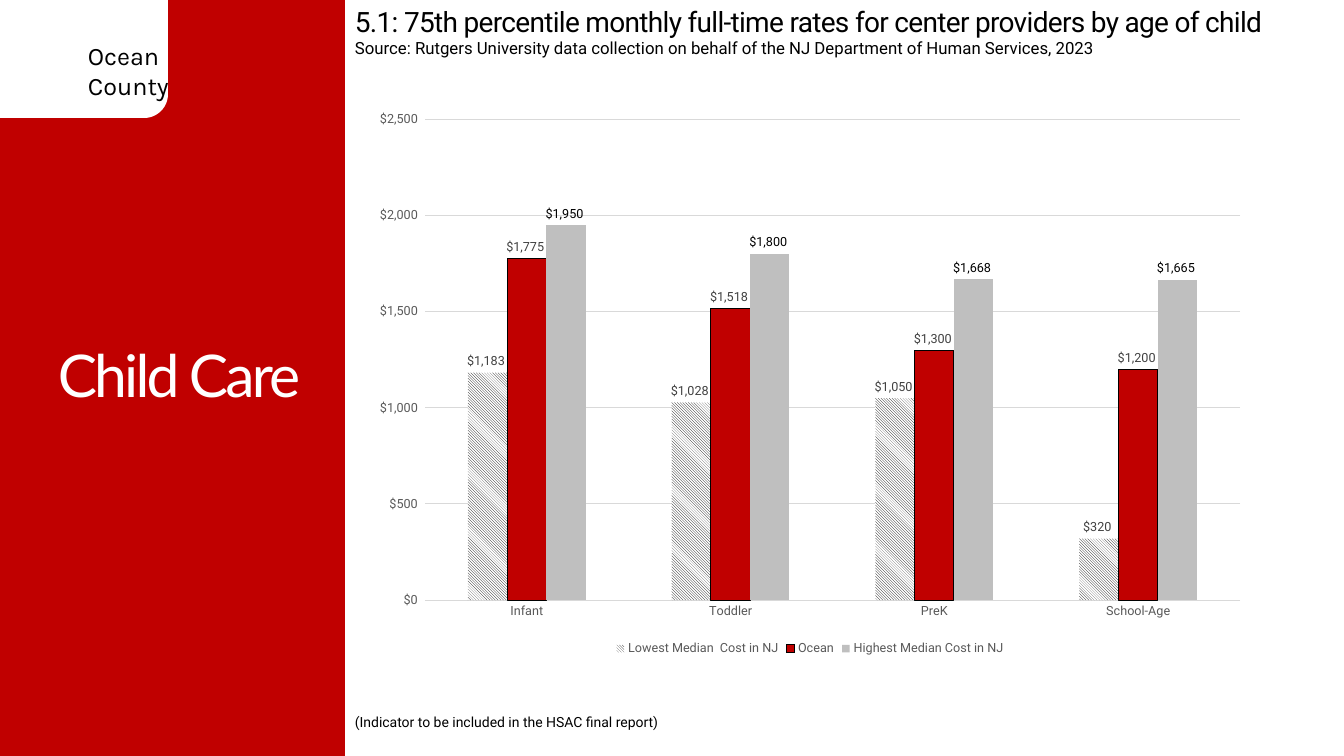
from dataclasses import dataclass

from pptx import Presentation
from pptx.chart.data import CategoryChartData
from pptx.dml.color import RGBColor
from pptx.enum.chart import XL_CHART_TYPE, XL_LABEL_POSITION, XL_LEGEND_POSITION, XL_TICK_MARK
from pptx.enum.dml import MSO_PATTERN
from pptx.enum.shapes import MSO_SHAPE
from pptx.enum.text import MSO_ANCHOR, MSO_AUTO_SIZE, PP_ALIGN
from pptx.util import Pt


@dataclass(frozen=True)
class Theme:
    red: str = "C00000"
    white: str = "FFFFFF"
    black: str = "000000"
    silver: str = "BFBFBF"
    grid: str = "D9D9D9"
    axis_text: str = "595959"
    label_text: str = "404040"
    section_size: int = 42
    heading_size: int = 20
    county_size: int = 18
    source_size: int = 12
    note_size: int = 10
    chart_size: int = 9
    body_font: str = "Roboto"
    section_font: str = "Lato"
    county_font: str = "Karla"


THEME = Theme()
SLIDE_SIZE = (1344, 756)
SECTION = {
    "lines": ["Child Care"], "box": (0, 76, 358, 605), "size": THEME.section_size,
    "font": THEME.section_font, "color": THEME.white, "spacing": -200,
    "frame": {"vertical_anchor": MSO_ANCHOR.MIDDLE, "auto_size": MSO_AUTO_SIZE.NONE},
    "paragraph": {"alignment": PP_ALIGN.CENTER, "line_spacing": 0.9},
}
GROWING = {"auto_size": MSO_AUTO_SIZE.SHAPE_TO_FIT_TEXT}
TEXTS = [
    {"lines": ["Ocean", "County"], "box": (78, 35, 102, 71), "size": THEME.county_size,
     "font": THEME.county_font, "frame": GROWING},
    {"lines": ["5.1: 75th percentile monthly full-time rates for center providers by age of child"],
     "box": (345, 0, 994, 44), "size": THEME.heading_size, "spacing": -50, "frame": GROWING},
    {"lines": ["Source: Rutgers University data collection on behalf of the "
               "NJ Department of Human Services, 2023"],
     "box": (345, 33, 926, 30), "size": THEME.source_size, "frame": GROWING},
    {"lines": ["(Indicator to be included in the HSAC final report)"],
     "box": (345, 701, 957, 41), "size": THEME.note_size,
     "frame": {"vertical_anchor": MSO_ANCHOR.MIDDLE},
     "paragraph": {"alignment": PP_ALIGN.JUSTIFY}},
]
PANELS = [
    (MSO_SHAPE.RECTANGLE, (0, 0, 345, 756), THEME.red),
    (MSO_SHAPE.ROUNDED_RECTANGLE, (-33, -25, 201, 143), THEME.white),
]
CHART_BOX = (362, 101, 896, 559)
AGES = ["Infant", "Toddler", "PreK", "School-Age"]
RATES = [
    {"name": "Lowest Median  Cost in NJ", "values": [1183, 1028, 1050, 320],
     "pattern": MSO_PATTERN.LIGHT_DOWNWARD_DIAGONAL, "fill": THEME.black,
     "label": THEME.label_text},
    {"name": "Ocean", "values": [1775, 1518, 1300, 1200], "fill": THEME.red,
     "line": THEME.black, "label": THEME.label_text},
    {"name": "Highest Median Cost in NJ", "values": [1950, 1800, 1668, 1665],
     "fill": THEME.silver, "label": THEME.black},
]
DOLLARS = '"$"#,##0_);[Red]\\("$"#,##0\\)'


def px(length):
    return round(length * 914400 / 100.8)


def emu(box):
    return [px(length) for length in box]


def rgb(color):
    return RGBColor.from_string(color)


def apply(target, values):
    for name, value in values.items():
        setattr(target, name, value)


def style_font(font, size, color, family=THEME.body_font):
    apply(font, {"size": Pt(size), "name": family, "bold": False})
    font.color.rgb = rgb(color)


def style_line(line, color):
    line.color.rgb = rgb(color)
    line.width = Pt(0.75)


def write(shape, text):
    apply(shape, dict(zip(("left", "top", "width", "height"), emu(text["box"]))))
    frame = shape.text_frame
    apply(frame, {"word_wrap": True, **text["frame"]})
    for index, line in enumerate(text["lines"]):
        para = frame.add_paragraph() if index else frame.paragraphs[0]
        apply(para, text.get("paragraph", {}))
        span = para.add_run()
        span.text = line
        style_font(span.font, text["size"], text.get("color", THEME.black),
                   text.get("font", THEME.body_font))
        if "spacing" in text:
            span._r.get_or_add_rPr().set("spc", str(text["spacing"]))


def add_panel(page, kind, box, color):
    panel = page.shapes.add_shape(kind, *emu(box))
    panel.shadow.inherit = False
    panel.fill.solid()
    panel.fill.fore_color.rgb = rgb(color)
    panel.line.fill.background()


def style_series(series, rate):
    series.invert_if_negative = False
    fill, line = series.format.fill, series.format.line
    if "pattern" in rate:
        fill.patterned()
        fill.pattern = rate["pattern"]
        fill.back_color.rgb = rgb(THEME.white)
    else:
        fill.solid()
    fill.fore_color.rgb = rgb(rate["fill"])
    if "line" in rate:
        style_line(line, rate["line"])
    else:
        line.fill.background()
    labels = series.data_labels
    apply(labels, {"show_value": True, "number_format": DOLLARS,
                   "number_format_is_linked": False,
                   "position": XL_LABEL_POSITION.OUTSIDE_END})
    style_font(labels.font, THEME.chart_size, rate["label"])


def add_rate_chart(page):
    data = CategoryChartData(number_format=DOLLARS)
    data.categories = AGES
    for rate in RATES:
        data.add_series(rate["name"], rate["values"])
    chart = page.shapes.add_chart(XL_CHART_TYPE.COLUMN_CLUSTERED, *emu(CHART_BOX), data).chart
    apply(chart, {"has_title": False, "has_legend": True})
    style_font(chart.font, THEME.chart_size, THEME.axis_text)
    apply(chart.legend, {"position": XL_LEGEND_POSITION.BOTTOM, "include_in_layout": False})
    style_font(chart.legend.font, THEME.chart_size, THEME.axis_text)

    for axis in (chart.category_axis, chart.value_axis):
        apply(axis, {"major_tick_mark": XL_TICK_MARK.NONE, "minor_tick_mark": XL_TICK_MARK.NONE})
        style_font(axis.tick_labels.font, THEME.chart_size, THEME.axis_text)
    style_line(chart.category_axis.format.line, THEME.grid)
    values = chart.value_axis
    apply(values, {"minimum_scale": 0, "maximum_scale": 2500, "major_unit": 500})
    apply(values.tick_labels, {"number_format": DOLLARS, "number_format_is_linked": False})
    values.format.line.fill.background()
    style_line(values.major_gridlines.format.line, THEME.grid)

    plot = chart.plots[0]
    apply(plot, {"gap_width": 219, "overlap": 0, "vary_by_categories": False})
    for series, rate in zip(plot.series, RATES):
        style_series(series, rate)


def main():
    deck = Presentation()
    deck.slide_width, deck.slide_height = emu(SLIDE_SIZE)
    page = deck.slides.add_slide(deck.slide_layouts.get_by_name("Title Only"))
    for panel in PANELS:
        add_panel(page, *panel)
    title = page.shapes.title
    page.shapes._spTree.append(title._element)
    write(title, SECTION)
    for text in TEXTS:
        write(page.shapes.add_textbox(*emu(text["box"])), text)
    add_rate_chart(page)
    deck.save("out.pptx")


if __name__ == "__main__":
    main()
